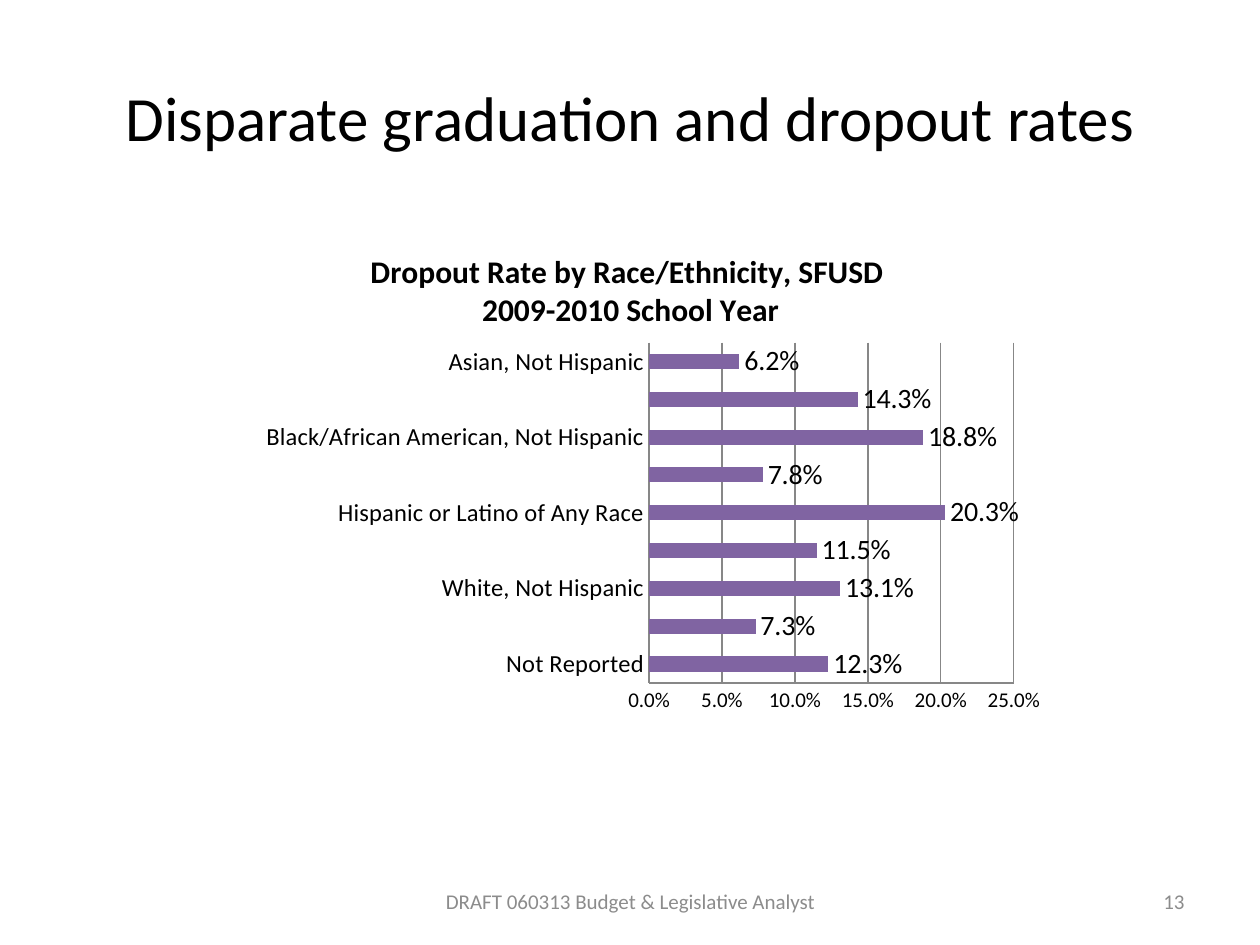
import pptx
import pptx.chart.data
import pptx.dml.color
import pptx.enum.chart
import pptx.enum.text
import pptx.util
from lxml import etree
from pptx.util import Inches, Pt

FONT = "Calibri"
COLORS = {"text": "000000", "bar": "8064A2", "grid": "878787", "footer": "8C8C8C"}
# Every second bar is unlabelled on the axis.
DROPOUT_RATES = [
    ("Not Reported", 0.123),
    ("", 0.073),
    ("White, Not Hispanic", 0.131),
    ("", 0.115),
    ("Hispanic or Latino of Any Race", 0.203),
    ("", 0.078),
    ("Black/African American, Not Hispanic", 0.188),
    ("", 0.143),
    ("Asian, Not Hispanic", 0.062),
]
PLOT_AREA = {"x": 0.522, "y": 0.227, "w": 0.434, "h": 0.689}


def rgb(name):
    return pptx.dml.color.RGBColor.from_string(COLORS[name])


def style_font(font, size, color="text", bold=False):
    font.name = FONT
    font.size = Pt(size)
    font.bold = bold
    font.color.rgb = rgb(color)


def fill_text(shape, text, size, color, align):
    frame = shape.text_frame
    frame.word_wrap = True
    frame.vertical_anchor = pptx.enum.text.MSO_ANCHOR.MIDDLE
    frame.text = text
    paragraph = frame.paragraphs[0]
    paragraph.alignment = align
    style_font(paragraph.runs[0].font, size, color)


def place_title(slide, left, top, width, height):
    title = slide.shapes.title
    title.left, title.top, title.width, title.height = left, top, width, height
    fill_text(title, "Disparate graduation and dropout rates", 36, "text",
              pptx.enum.text.PP_ALIGN.CENTER)


def add_footer(slide, text, align, left, top, width, height):
    footer = slide.shapes.add_textbox(left, top, width, height)
    fill_text(footer, text, 12, "footer", align)


def fix_plot_area(chart):
    """Pin the inner plot area to fractions of the chart's box."""
    plot_area = chart._chartSpace.chart.plotArea
    namespace = etree.QName(plot_area).namespace

    def add(parent, tag, value=None):
        child = etree.SubElement(parent, f"{{{namespace}}}{tag}")
        if value is not None:
            child.set("val", str(value))
        return child

    for old_layout in plot_area.findall(f"{{{namespace}}}layout"):
        plot_area.remove(old_layout)
    layout = add(plot_area, "layout")
    plot_area.insert(0, layout)
    manual = add(layout, "manualLayout")
    add(manual, "layoutTarget", "inner")
    for edge in ("x", "y"):
        add(manual, f"{edge}Mode", "edge")
    for side, fraction in PLOT_AREA.items():
        add(manual, side, fraction)


def style_axes(chart):
    for axis, size in ((chart.category_axis, 14), (chart.value_axis, 12)):
        axis.major_tick_mark = pptx.enum.chart.XL_TICK_MARK.NONE
        axis.minor_tick_mark = pptx.enum.chart.XL_TICK_MARK.NONE
        axis.format.line.color.rgb = rgb("grid")
        style_font(axis.tick_labels.font, size)
    chart.category_axis.has_major_gridlines = False

    rate_axis = chart.value_axis
    rate_axis.minimum_scale, rate_axis.maximum_scale = 0, 0.25
    rate_axis.major_unit = 0.05
    rate_axis.has_major_gridlines = True
    rate_axis.major_gridlines.format.line.color.rgb = rgb("grid")
    rate_axis.tick_labels.number_format = "0.0%"
    rate_axis.tick_labels.number_format_is_linked = False


def add_dropout_chart(slide, left, top, width, height):
    rates = pptx.chart.data.CategoryChartData(number_format="0.0%")
    rates.categories = [group for group, _ in DROPOUT_RATES]
    rates.add_series("Series 1", [rate for _, rate in DROPOUT_RATES])
    chart = slide.shapes.add_chart(
        pptx.enum.chart.XL_CHART_TYPE.BAR_CLUSTERED, left, top, width, height, rates).chart
    style_font(chart.font, 12)
    chart.has_legend = False

    heading = chart.chart_title.text_frame
    heading.text = "Dropout Rate by Race/Ethnicity, SFUSD \n2009-2010 School Year"
    for paragraph in heading.paragraphs:
        style_font(paragraph.runs[0].font, 18, bold=True)
    chart.chart_title.include_in_layout = False

    style_axes(chart)
    fix_plot_area(chart)

    bars = chart.plots[0]
    bars.gap_width = 150
    bars.vary_by_categories = False
    series = bars.series[0]
    series.format.fill.solid()
    series.format.fill.fore_color.rgb = rgb("bar")
    labels = series.data_labels
    labels.show_value = True
    labels.number_format = "0.0%"
    labels.number_format_is_linked = False
    labels.position = pptx.enum.chart.XL_LABEL_POSITION.OUTSIDE_END
    style_font(labels.font, 16)


def main():
    deck = pptx.Presentation()
    deck.slide_width, deck.slide_height = Inches(10), Inches(7.5)
    slide = deck.slides.add_slide(deck.slide_layouts.get_by_name("Title Only"))
    align = pptx.enum.text.PP_ALIGN

    place_title(slide, Inches(0.5), Inches(0.3), Inches(9), Inches(1.25))
    add_dropout_chart(slide, Inches(1.67), Inches(1.83), Inches(6.67), Inches(3.92))
    add_footer(slide, "DRAFT 060313 Budget & Legislative Analyst", align.CENTER,
               Inches(3.42), Inches(6.95), Inches(3.17), Inches(0.4))
    add_footer(slide, "13", align.RIGHT,
               Inches(7.17), Inches(6.95), Inches(2.33), Inches(0.4))
    deck.save("out.pptx")


if __name__ == "__main__":
    main()
